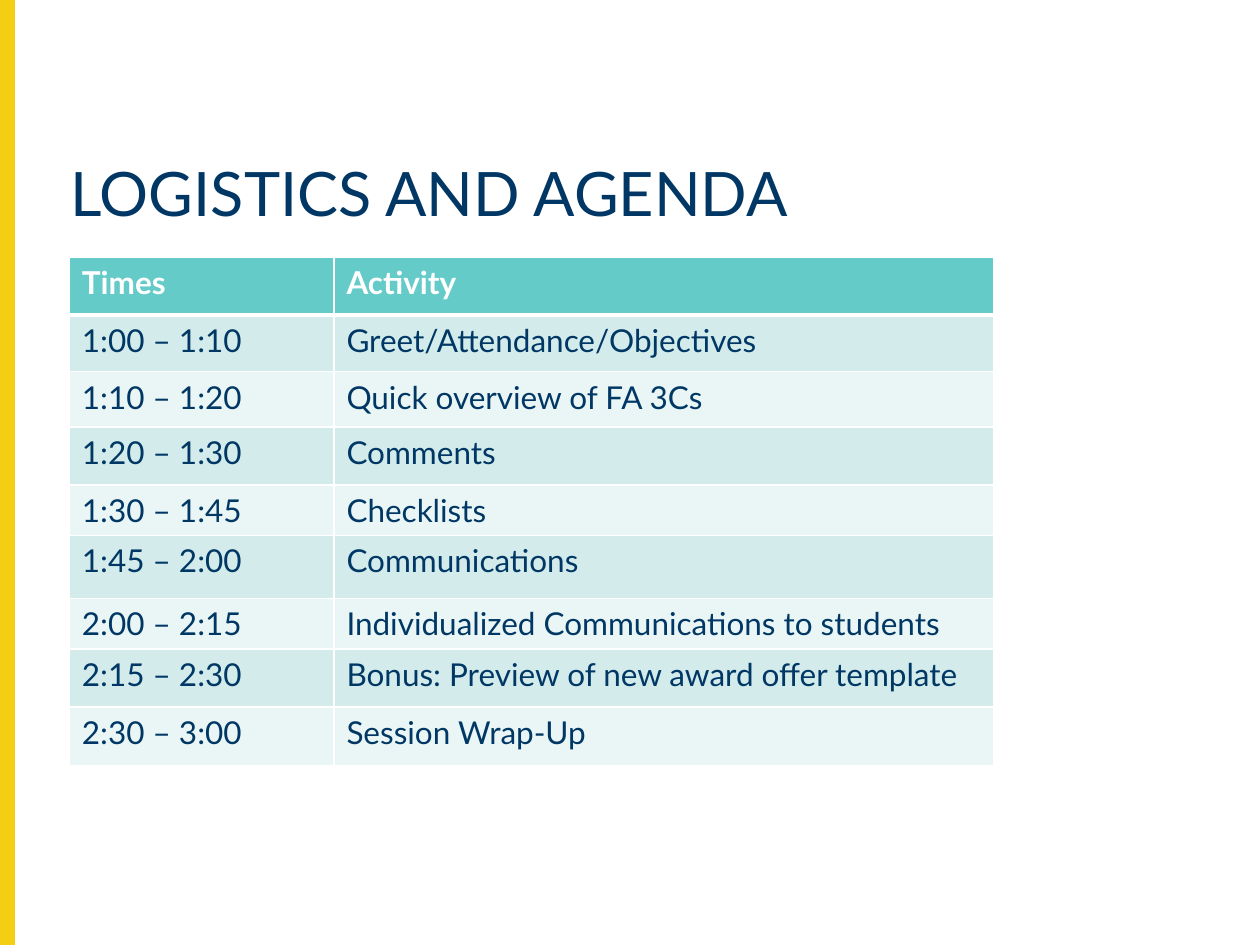
import pptx
import pptx.dml.color
import pptx.enum.shapes
import pptx.enum.text
import pptx.oxml
import pptx.oxml.ns
import pptx.util
from pptx.util import Inches

NAVY, GOLD, TEAL, WHITE = "003764", "F4CE12", "65CBC9", "FFFFFF"
BANDS = ["D3ECEB", "EAF6F5"]
COLS = [2.1, 5.24]
ROWS = [
    (0.46, "Times", "Activity"),
    (0.45, "1:00 – 1:10", "Greet/Attendance/Objectives"),
    (0.44, "1:10 – 1:20", "Quick overview of FA 3Cs"),
    (0.46, "1:20 – 1:30", "Comments"),
    (0.4, "1:30 – 1:45", "Checklists"),
    (0.5, "1:45 – 2:00", "Communications"),
    (0.4, "2:00 – 2:15", "Individualized Communications to students"),
    (0.46, "2:15 – 2:30", "Bonus: Preview of new award offer template"),
    (0.47, "2:30 – 3:00", "Session Wrap-Up"),
]


def color(code):
    return pptx.dml.color.RGBColor.from_string(code)


def style(para, size, code, bold=False):
    for run in para.runs:
        run.font.name = "Lato"
        run.font.size = pptx.util.Pt(size)
        run.font.bold = bold
        run.font.color.rgb = color(code)


def add_bar(slide, box):
    kind = pptx.enum.shapes.MSO_SHAPE.RECTANGLE
    bar = slide.shapes.add_shape(kind, *map(Inches, box))
    bar.shadow.inherit = False
    bar.fill.solid()
    bar.fill.fore_color.rgb = color(GOLD)
    bar.line.color.rgb = color(GOLD)
    bar.line.width = pptx.util.Pt(1)


def set_title(slide, box, text):
    title = slide.shapes.title
    title.left, title.top, title.width, title.height = map(Inches, box)
    frame = title.text_frame
    frame.text = text
    frame.word_wrap = True
    frame.auto_size = pptx.enum.text.MSO_AUTO_SIZE.NONE
    frame.vertical_anchor = pptx.enum.text.MSO_ANCHOR.TOP
    para = frame.paragraphs[0]
    para.alignment = pptx.enum.text.PP_ALIGN.LEFT
    para.line_spacing = 0.9
    style(para, 35, NAVY)


def set_edges(cell, top, base):
    props = cell._tc.get_or_add_tcPr()
    space = pptx.oxml.ns.nsdecls("a")
    for side, width in zip("LRTB", (1, 1, top, base)):
        props.append(pptx.oxml.parse_xml(
            f'<a:ln{side} {space} w="{pptx.util.Pt(width)}"><a:solidFill>'
            f'<a:srgbClr val="{WHITE}"/></a:solidFill></a:ln{side}>'))


def set_cell(cell, text, row):
    head = row == 0
    cell.text_frame.text = text
    style(cell.text_frame.paragraphs[0], 18, WHITE if head else NAVY, head)
    set_edges(cell, 3 if row == 1 else 1, 3 if head else 1)
    cell.fill.solid()
    cell.fill.fore_color.rgb = color(TEAL if head else BANDS[(row - 1) % 2])


def add_agenda(slide, box):
    frame = slide.shapes.add_table(len(ROWS), len(COLS), *map(Inches, box))
    table = frame.table
    for col, width in zip(table.columns, COLS):
        col.width = Inches(width)
    for row, (height, *texts) in enumerate(ROWS):
        table.rows[row].height = Inches(height)
        for col, text in enumerate(texts):
            set_cell(table.cell(row, col), text, row)


def main():
    deck = pptx.Presentation()
    deck.slide_width, deck.slide_height = Inches(10), Inches(7.5)
    slide = deck.slides.add_slide(deck.slide_layouts[5])
    add_bar(slide, (0, 0, 0.11, 7.5))
    set_title(slide, (0.46, 1.25, 9.33, 0.79), "LOGISTICS AND AGENDA")
    add_agenda(slide, (0.55, 2.04, sum(COLS), sum(row[0] for row in ROWS)))
    deck.save("out.pptx")


if __name__ == "__main__":
    main()
